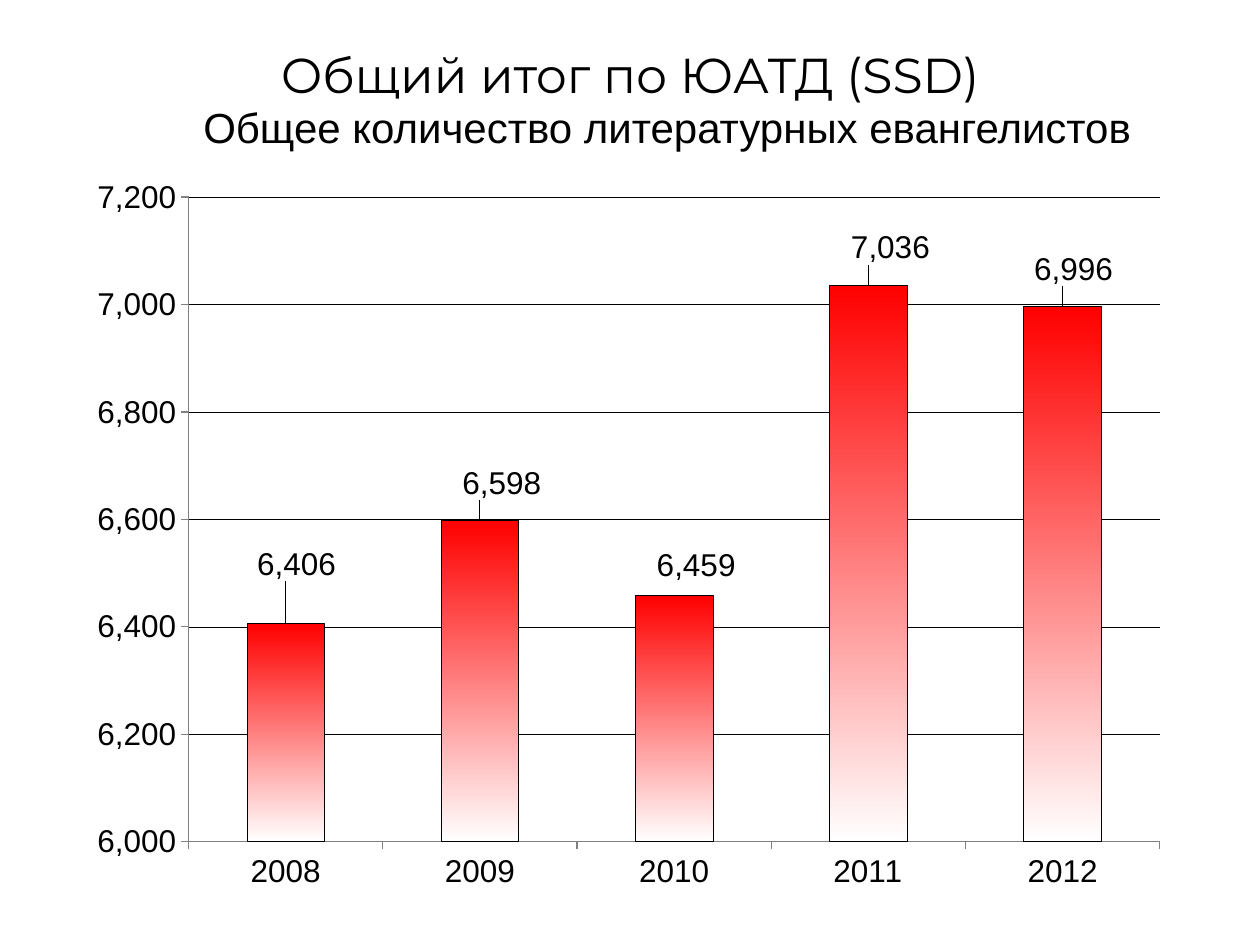
from lxml.etree import SubElement
from pptx import Presentation
from pptx.chart.data import CategoryChartData as Data
from pptx.dml.color import RGBColor
from pptx.enum.chart import XL_CHART_TYPE as Kind, XL_LABEL_POSITION as Pos
from pptx.enum.chart import XL_TICK_MARK as Tick
from pptx.enum.text import MSO_ANCHOR, PP_ALIGN
from pptx.oxml import parse_xml
from pptx.oxml.ns import nsdecls, qn
from pptx.util import Inches, Pt

BLACK = RGBColor(0, 0, 0)
GREY = RGBColor(0x80, 0x80, 0x80)
RED = RGBColor(0xFF, 0, 0)
WHITE = RGBColor(0xFF, 0xFF, 0xFF)

TITLE = "Общий итог по ЮАТД (SSD)"
SUB = "Общее количество литературных евангелистов"
YEARS = ["2008", "2009", "2010", "2011", "2012"]
COUNTS = [6406, 6598, 6459, 7036, 6996]
SHIFTS = [(0.01, -0.05), (0.02, -0.02), (0.02, -0.01), (0.02, -0.02), (0.01, -0.02)]
PLOT = {"layoutTarget": "inner", "xMode": "edge", "yMode": "edge",
        "x": 0.1, "y": 0.04, "w": 0.88, "h": 0.87}
FORMAT = "#,##0"


def place(shape, left, top, width, height):
    shape.left, shape.top = Inches(left), Inches(top)
    shape.width, shape.height = Inches(width), Inches(height)


def write(shape, text, size=24, face="Arial", color=BLACK):
    frame = shape.text_frame
    frame.word_wrap = True
    frame.vertical_anchor = MSO_ANCHOR.TOP
    para = frame.paragraphs[0]
    para.alignment = PP_ALIGN.CENTER
    run = para.add_run()
    run.text = text
    style(run.font, size, face, color)


def style(font, size=18, face="Arial", color=BLACK):
    font.size, font.name = Pt(size), face
    font.bold = False
    font.color.rgb = color


def layout(**parts):
    root = parse_xml(f"<c:layout {nsdecls('c')}/>")
    manual = SubElement(root, qn("c:manualLayout"))
    for name, value in parts.items():
        SubElement(manual, qn(f"c:{name}")).set("val", str(value))
    return root


def stroke(line, color, width):
    line.color.rgb, line.width = color, Pt(width)


def draw(slide):
    data = Data(number_format=FORMAT)
    data.categories = YEARS
    data.add_series("Series 1", COUNTS)
    box = [Inches(n) for n in (0.62, 1.33, 8.76, 5.88)]
    chart = slide.shapes.add_chart(Kind.COLUMN_CLUSTERED, *box, data).chart
    chart.has_title = chart.has_legend = False
    style(chart.font)

    area = chart._chartSpace.chart.plotArea
    for old in area.findall(qn("c:layout")):
        area.remove(old)
    area.insert(0, layout(**PLOT))

    for axis in (chart.category_axis, chart.value_axis):
        axis.major_tick_mark = Tick.OUTSIDE
        axis.minor_tick_mark = Tick.NONE
        stroke(axis.format.line, GREY, 0.75)
        style(axis.tick_labels.font)
    scale = chart.value_axis
    scale.minimum_scale, scale.maximum_scale, scale.major_unit = 6000, 7200, 200
    scale.tick_labels.number_format = FORMAT
    scale.tick_labels.number_format_is_linked = False
    scale.has_major_gridlines = True
    stroke(scale.major_gridlines.format.line, BLACK, 0.25)

    plot = chart.plots[0]
    plot.gap_width = 150
    plot.vary_by_categories = False
    bars = plot.series[0]
    bars.invert_if_negative = False
    fill = bars.format.fill
    fill.gradient()
    fill.gradient_angle = 270
    for stop, color, at in zip(fill.gradient_stops, (RED, WHITE), (0, 1)):
        stop.color.rgb, stop.position = color, at
    stroke(bars.format.line, BLACK, 0.25)

    labels = bars.data_labels
    labels.show_value = True
    labels.number_format, labels.number_format_is_linked = FORMAT, False
    labels.position = Pos.OUTSIDE_END
    style(labels.font)
    for i, (x, y) in enumerate(SHIFTS):
        label = bars.points[i].data_label
        style(label.font)
        label.position = Pos.OUTSIDE_END
        node = labels._element.findall(qn("c:dLbl"))[i]
        node.find(qn("c:idx")).addnext(layout(x=x, y=y))


def main():
    deck = Presentation()
    deck.slide_width, deck.slide_height = Inches(10), Inches(7.5)
    slide = deck.slides.add_slide(deck.slide_layouts[5])
    draw(slide)
    title = slide.shapes.title
    place(title, 0.5, 0.3, 9, 1.25)
    write(title, TITLE, size=28, face="Montserrat")
    sub = slide.shapes.add_textbox(0, 0, 0, 0)
    place(sub, 1.42, 0.76, 7.75, 0.5)
    write(sub, SUB)
    deck.save("out.pptx")


if __name__ == "__main__":
    main()
